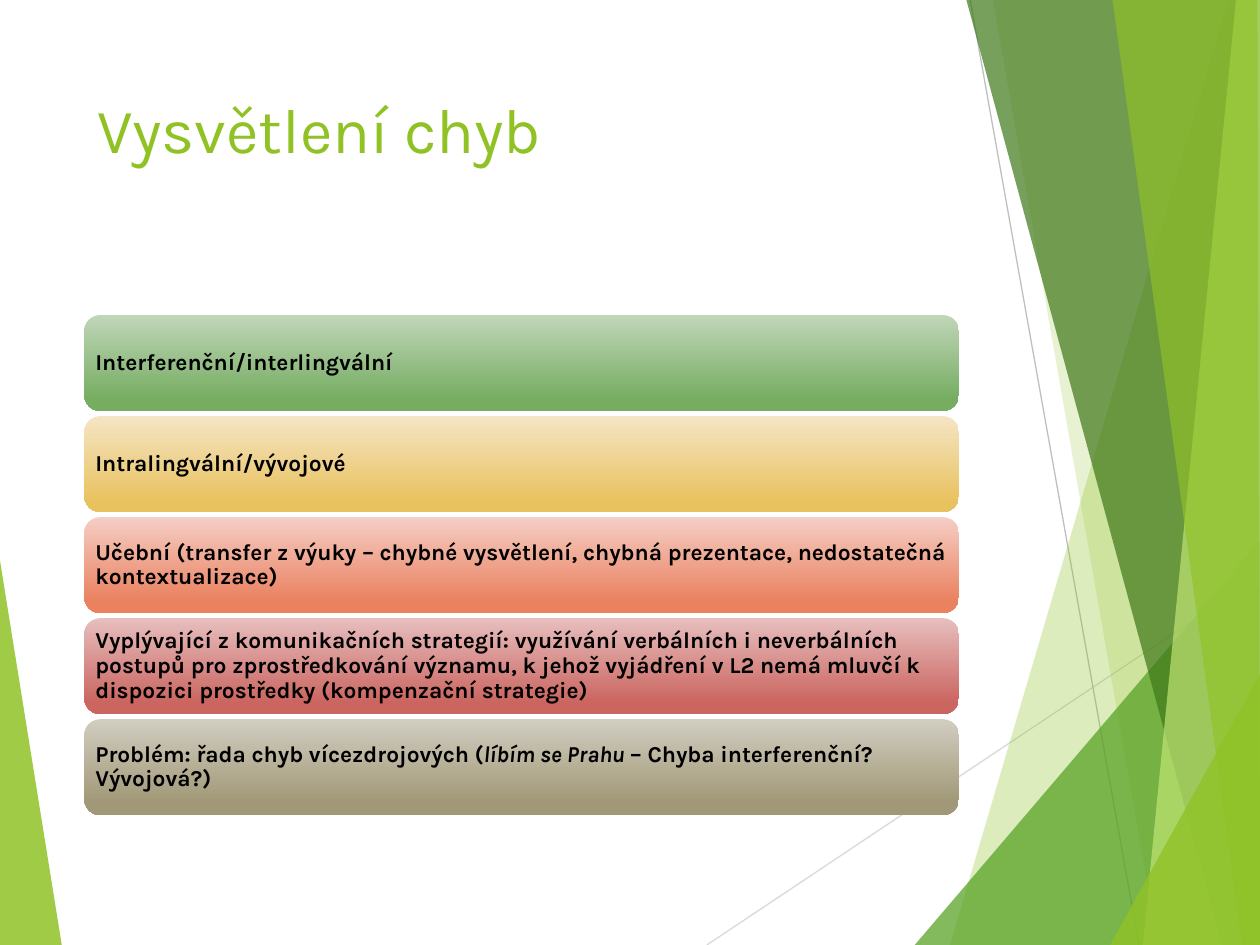
from lxml import etree
from pptx import Presentation
from pptx.dml.color import RGBColor
from pptx.enum.shapes import MSO_CONNECTOR, MSO_SHAPE
from pptx.enum.text import MSO_ANCHOR, PP_ALIGN
from pptx.oxml.ns import qn
from pptx.util import Inches, Pt

STRAIGHT = MSO_CONNECTOR.STRAIGHT
ROUNDED = MSO_SHAPE.ROUNDED_RECTANGLE
TOP, MIDDLE = MSO_ANCHOR.TOP, MSO_ANCHOR.MIDDLE
LEFT = PP_ALIGN.LEFT

FONT = "Karla"
WIDTH, HEIGHT = 10, 7.5
GREEN = "90C226"

RAYS = [
    ("D9D9D9", (5.61, HEIGHT), (WIDTH, 4.57)),
    ("BFBFBF", (7.7, 0), (9.04, HEIGHT)),
]
FACETS = [
    (GREEN, 85, [(0, 4.45), (0.49, HEIGHT), (0, HEIGHT)]),
    (GREEN, 30, [(9.75, 0), (7.54, HEIGHT), (WIDTH, HEIGHT), (WIDTH, 0)]),
    (GREEN, 20, [(7.88, 0), (9.19, HEIGHT), (WIDTH, HEIGHT), (WIDTH, 0)]),
    ("54A021", 72, [(7.26, HEIGHT), (WIDTH, 4.29), (WIDTH, HEIGHT)]),
    ("3F7819", 70, [(7.67, 0), (9.7, HEIGHT), (WIDTH, HEIGHT), (WIDTH, 0)]),
    ("C0E474", 70, [(9.81, 0), (9.07, HEIGHT), (WIDTH, HEIGHT), (WIDTH, 0)]),
    (GREEN, 65, [(8.83, 0), (9.86, HEIGHT), (WIDTH, HEIGHT), (9.98, 0)]),
    (GREEN, 80, [(8.81, HEIGHT), (WIDTH, 5.35), (WIDTH, HEIGHT)]),
]
CAUSES = [
    ("C0D6B9", "76AD61", [("Interferenční/interlingvální", False)]),
    ("F5E5C5", "E9C260", [("Intralingvální/vývojové", False)]),
    ("F5CEC5", "EA815F", [("Učební (transfer z výuky – chybné vysvětlení, chybná prezentace, "
                           "nedostatečná kontextualizace)", False)]),
    ("E6BFBE", "CB6560", [("Vyplývající z komunikačních strategií: využívání verbálních i "
                           "neverbálních postupů pro zprostředkování významu, k jehož vyjádření "
                           "v L2 nemá mluvčí k dispozici prostředky (kompenzační strategie)", False)]),
    ("D1CDC0", "A19877", [("Problém: řada chyb vícezdrojových (", False),
                          ("líbím se Prahu ", True),
                          ("– Chyba interferenční? Vývojová?)", False)]),
]


def rgb(value):
    """Return the colour for a hex string."""
    return RGBColor.from_string(value)


def set_margins(frame, side, vertical):
    """Set the inner margins of a text frame in inches."""
    frame.margin_left = frame.margin_right = Inches(side)
    frame.margin_top = frame.margin_bottom = Inches(vertical)


def add_ray(slide, color, start, end):
    """Draw one thin background line."""
    ray = slide.shapes.add_connector(STRAIGHT, *map(Inches, start + end))
    ray.line.color.rgb = rgb(color)
    ray.line.width = Pt(0.75)
    etree.SubElement(ray._element.spPr, qn("a:effectLst"))


def add_facet(slide, color, opacity, corners):
    """Draw one translucent background polygon."""
    points = [(Inches(x), Inches(y)) for x, y in corners]
    builder = slide.shapes.build_freeform(*points[0])
    builder.add_line_segments(points[1:], close=True)
    facet = builder.convert_to_shape()
    facet.shadow.inherit = False
    facet.line.fill.background()
    facet.fill.solid()
    facet.fill.fore_color.rgb = rgb(color)
    color_node = facet._element.spPr.find(qn("a:solidFill"))[0]
    etree.SubElement(color_node, qn("a:alpha"), val=str(opacity * 1000))


def add_backdrop(slide):
    """Draw the lines and facets along the slide edges."""
    for ray in RAYS:
        add_ray(slide, *ray)
    for facet in FACETS:
        add_facet(slide, *facet)


def place_title(slide, left, top, width, height):
    """Move and format the title placeholder."""
    title = slide.shapes.title
    title.left, title.top = Inches(left), Inches(top)
    title.width, title.height = Inches(width), Inches(height)
    frame = title.text_frame
    frame.text = "Vysvětlení chyb"
    frame.vertical_anchor = TOP
    set_margins(frame, 0.1, 0.05)
    heading = frame.paragraphs[0]
    heading.alignment = LEFT
    heading.font.name = FONT
    heading.font.size = Pt(36)
    heading.font.color.rgb = rgb(GREEN)


def add_cause(slide, left, top, width, height, light, dark, pieces):
    """Draw one gradient bar with its text."""
    bar = slide.shapes.add_shape(ROUNDED, Inches(left), Inches(top), Inches(width), Inches(height))
    bar.shadow.inherit = False
    bar.line.fill.background()
    bar.fill.gradient()
    bar.fill.gradient_angle = 270
    for stop, color, position in zip(bar.fill.gradient_stops, (light, dark), (0, 0.88)):
        stop.color.rgb = rgb(color)
        stop.position = position
    frame = bar.text_frame
    frame.word_wrap = True
    frame.vertical_anchor = MIDDLE
    set_margins(frame, 0.05, 0.05)
    statement = frame.paragraphs[0]
    statement.alignment = LEFT
    statement.line_spacing = 0.9
    statement.font.name = FONT
    statement.font.size = Pt(13)
    statement.font.bold = True
    statement.font.color.rgb = rgb("000000")
    for words, italic in pieces:
        run = statement.add_run()
        run.text = words
        if italic:
            run.font.italic = True


def add_causes(slide, left, top, width, height):
    """Stack the bars evenly in the given box."""
    gap = 0.04
    bar_height = (height + gap) / len(CAUSES) - gap
    for row, cause in enumerate(CAUSES):
        add_cause(slide, left, top + row * (bar_height + gap), width, bar_height, *cause)


def main():
    """Build and save the slide."""
    deck = Presentation()
    deck.slide_width, deck.slide_height = Inches(WIDTH), Inches(HEIGHT)
    slide = deck.slides.add_slide(deck.slide_layouts.get_by_name("Title Only"))
    add_backdrop(slide)
    place_title(slide, 0.67, 0.67, 6.94, 1.44)
    add_causes(slide, 0.67, 2.5, 6.94, 3.97)
    deck.save("out.pptx")


if __name__ == "__main__":
    main()
